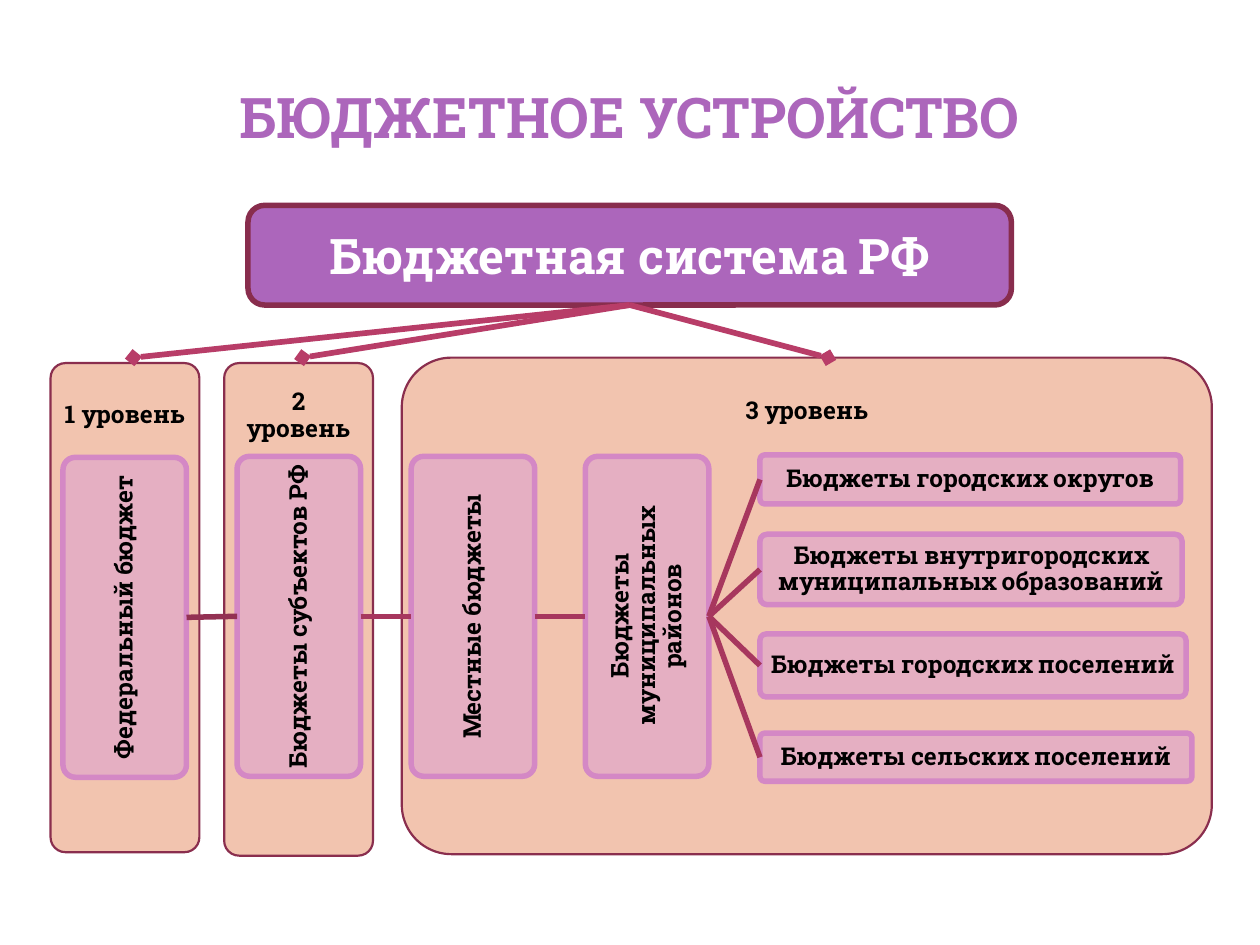
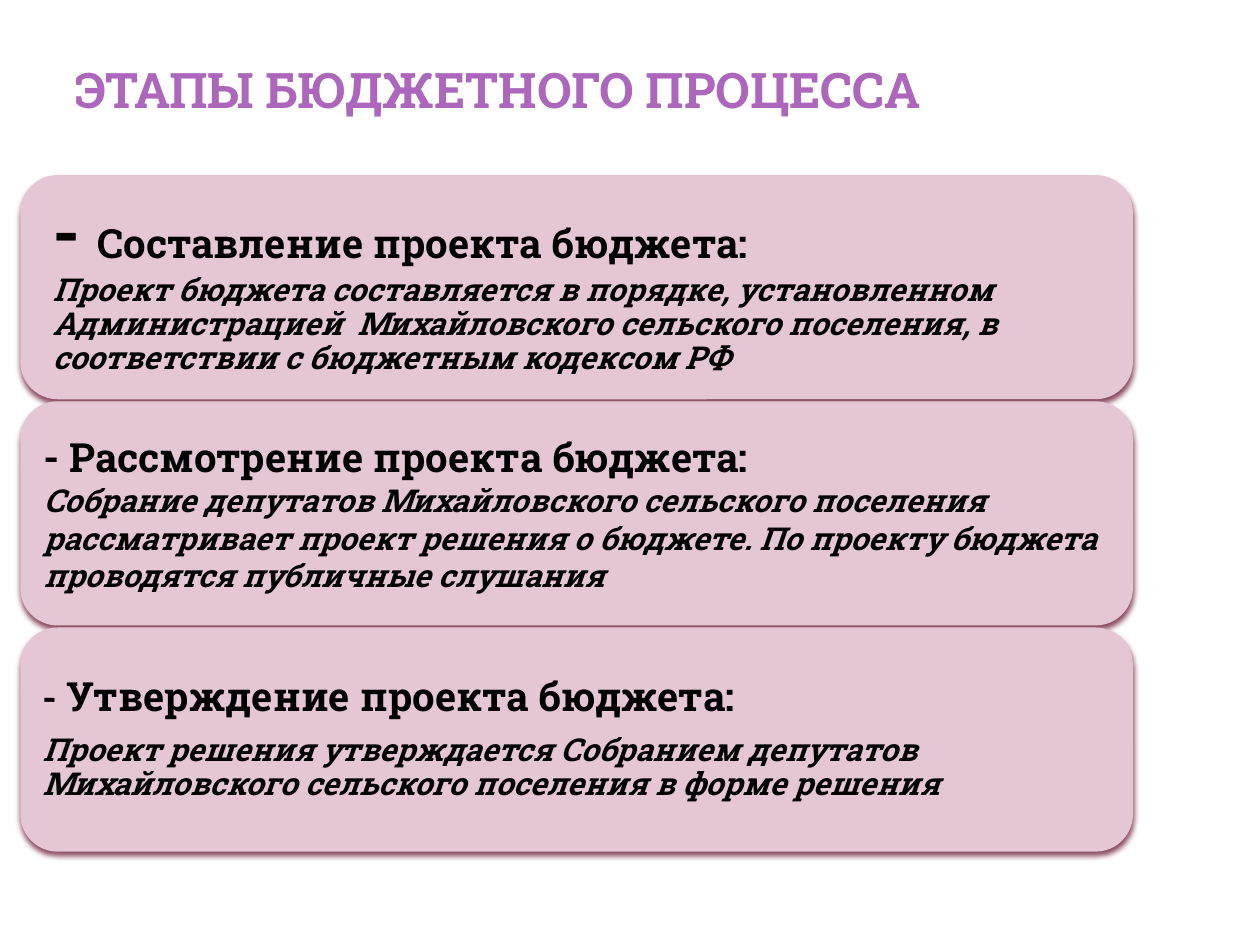
from dataclasses import dataclass
from typing import Optional

from lxml.etree import SubElement
from pptx import Presentation
from pptx.dml.color import RGBColor
from pptx.enum.shapes import MSO_CONNECTOR, MSO_SHAPE
from pptx.enum.text import MSO_ANCHOR, MSO_AUTO_SIZE, PP_ALIGN
from pptx.oxml.ns import qn
from pptx.util import Cm, Pt

FONT = "Roboto Slab"
COLORS = {
    "purple": "AC66BB", "wine": "882D4D", "panel_line": "8A2E4E",
    "peach": "F2C4AF", "pink": "E5AFC2", "orchid": "D488C5",
    "first_link": "933153", "link": "A7375E", "branch": "B83D68",
    "stage": "E5C6D5", "shadow": "722640", "black": "000000", "white": "FFFFFF",
}
BOTTOM, LEFT, RIGHT = 2, 1, 3


@dataclass(frozen=True)
class Rect:
    """Place and size in centimetres."""
    left: float
    top: float
    width: float
    height: float

    def lengths(self) -> tuple:
        return Cm(self.left), Cm(self.top), Cm(self.width), Cm(self.height)


@dataclass(frozen=True)
class BoxStyle:
    fill: str
    line: Optional[str] = None
    line_width: float = 0
    corner: float = 0.1
    size: float = 14
    color: str = "black"
    spacing: float = 0.9


@dataclass(frozen=True)
class Level:
    text: str
    rect: Rect
    head: float
    inset: float
    branch_x: float


@dataclass(frozen=True)
class Stage:
    heading: str
    detail: str
    dash_size: float
    inset: float
    spacing: float = 0.9
    after: float = 0


ROOT = BoxStyle("purple", "wine", 3.15, 0.1667, 28, "white", 1)
PANEL = BoxStyle("peach", "panel_line", 1.25)
BUDGET = BoxStyle("pink", "orchid", 3.15)
STAGE = BoxStyle("stage", corner=0.1667)

LEVELS = [
    Level("3 уровень", Rect(8.1, 7.21, 16.33, 10.01), 2.18, 0.2, 16.69),
    Level("2 уровень", Rect(4.52, 7.32, 3, 9.93), 2.13, 0.3, 6.1),
    Level("1 уровень", Rect(1.02, 7.32, 3, 9.86), 2.11, 0.12, 2.69),
]
BRANCH_Y = 7.21
CHAIN = ["Федеральный бюджет", "Бюджеты субъектов РФ", "Местные бюджеты",
         "Бюджеты муниципальных районов"]
LOCAL_LEFT = 15.32
LOCAL = [
    ("Бюджеты городских округов", Rect(LOCAL_LEFT, 9.17, 8.48, 0.99)),
    ("Бюджеты внутригородских муниципальных образований",
     Rect(LOCAL_LEFT, 10.77, 8.51, 1.42)),
    ("Бюджеты городских поселений", Rect(LOCAL_LEFT, 12.78, 8.59, 1.27)),
    ("Бюджеты сельских поселений", Rect(LOCAL_LEFT, 14.78, 8.71, 0.97)),
]
STAGES = [
    Stage("Составление проекта бюджета:",
          "Проект бюджета составляется в порядке, установленном Администрацией  "
          "Михайловского сельского поселения, в соответствии с бюджетным кодексом РФ",
          40, 0.43),
    Stage("Рассмотрение проекта бюджета:",
          "Собрание депутатов Михайловского сельского поселения рассматривает проект "
          "решения о бюджете. По проекту бюджета проводятся публичные слушания",
          23, 0.25, spacing=1),
    Stage("Утверждение проекта бюджета:",
          "Проект решения утверждается Собранием депутатов Михайловского сельского "
          "поселения в форме решения",
          21, 0.23, after=8),
]


def rgb(name: str) -> RGBColor:
    return RGBColor.from_string(COLORS[name])


def format_run(r, size: float, color: str, italic: bool = False) -> None:
    r.font.name = FONT
    r.font.size = Pt(size)
    r.font.bold = True
    r.font.italic = italic
    r.font.color.rgb = rgb(color)


def set_insets(tf, side: float, top: float, bottom: float) -> None:
    tf.margin_left = tf.margin_right = Cm(side)
    tf.margin_top, tf.margin_bottom = Cm(top), Cm(bottom)


def add_titled_slide(prs, title: str, rect: Rect, size: float, align: PP_ALIGN):
    slide = prs.slides.add_slide(prs.slide_layouts[5])
    sp = slide.shapes.title
    sp.left, sp.top, sp.width, sp.height = rect.lengths()
    tf = sp.text_frame
    tf.text = title
    tf.auto_size = MSO_AUTO_SIZE.NONE
    tf.vertical_anchor = MSO_ANCHOR.BOTTOM
    set_insets(tf, 0.13, 0, 0)
    p = tf.paragraphs[0]
    p.alignment = align
    format_run(p.runs[0], size, "purple")
    return slide


def add_box(slide, rect: Rect, style: BoxStyle, text: str = ""):
    sp = slide.shapes.add_shape(MSO_SHAPE.ROUNDED_RECTANGLE, *rect.lengths())
    sp.adjustments[0] = style.corner
    sp.shadow.inherit = False
    sp.fill.solid()
    sp.fill.fore_color.rgb = rgb(style.fill)
    if style.line:
        sp.line.color.rgb = rgb(style.line)
        sp.line.width = Pt(style.line_width)
    else:
        sp.line.fill.background()
    tf = sp.text_frame
    tf.word_wrap = True
    tf.vertical_anchor = MSO_ANCHOR.MIDDLE
    if text:
        tf.text = text
        p = tf.paragraphs[0]
        p.alignment = PP_ALIGN.CENTER
        p.line_spacing = style.spacing
        format_run(p.runs[0], style.size, style.color)
    return sp


def add_budget(slide, rect: Rect, text: str, upright: bool = False):
    sp = add_box(slide, rect, BUDGET, text)
    set_insets(sp.text_frame, 0.03, 0.03, 0.03)
    if upright:
        sp.element.txBody.bodyPr.set("vert", "vert270")
    return sp


def add_line(slide, start, side: int, color: str, width: float,
             x: float = 0, y: float = 0):
    """Draw a line from the given side of start to a point."""
    c = slide.shapes.add_connector(MSO_CONNECTOR.STRAIGHT, 0, 0, Cm(x), Cm(y))
    c.begin_connect(start, side)
    c.line.color.rgb = rgb(color)
    c.line.width = Pt(width)
    SubElement(c.element.spPr, qn("a:effectLst"))
    return c


def link(slide, start, end, color: str = "link") -> None:
    add_line(slide, start, RIGHT, color, 3.15).end_connect(end, LEFT)


def add_stage_shadow(sp) -> None:
    effects = sp.element.spPr.find(qn("a:effectLst"))
    shadow = SubElement(effects, qn("a:outerShdw"), blurRad=str(Pt(3.1)),
                        dist=str(Pt(2)), dir="5400000", rotWithShape="0")
    color = SubElement(shadow, qn("a:srgbClr"), val=COLORS["shadow"])
    SubElement(color, qn("a:alpha"), val="83000")


def build_structure(prs) -> None:
    slide = add_titled_slide(prs, "БЮДЖЕТНОЕ УСТРОЙСТВО",
                             Rect(1.27, 0.53, 22.86, 2.49), 32, PP_ALIGN.CENTER)
    for level in LEVELS:
        sp = add_box(slide, level.rect, PANEL, level.text)
        set_insets(sp.text_frame, level.inset, 0, level.rect.height - level.head)

    chain = []
    for i, text in enumerate(CHAIN):
        top = 9.2 if i else 9.22
        chain.append(add_budget(slide, Rect(1.27 + 3.51 * i, top, 2.49, 6.45),
                                text, upright=True))
    for i, (start, end) in enumerate(zip(chain, chain[1:])):
        link(slide, start, end, "link" if i else "first_link")
    for text, rect in LOCAL:
        link(slide, chain[-1], add_budget(slide, rect, text))

    root = add_box(slide, Rect(5, 4.14, 15.39, 2.01), ROOT, "Бюджетная система РФ")
    for level in LEVELS:
        c = add_line(slide, root, BOTTOM, "branch", 3.25, level.branch_x, BRANCH_Y)
        SubElement(c.element.spPr.find(qn("a:ln")), qn("a:tailEnd"), type="diamond")


def build_stages(prs) -> None:
    slide = add_titled_slide(prs, "ЭТАПЫ БЮДЖЕТНОГО ПРОЦЕССА",
                             Rect(1.4, 0.79, 20.32, 1.6), 28, PP_ALIGN.LEFT)
    for i, stage in enumerate(STAGES):
        sp = add_box(slide, Rect(0.41, 3.53 + 4.56 * i, 22.43, 4.52), STAGE)
        add_stage_shadow(sp)
        tf = sp.text_frame
        set_insets(tf, stage.inset, stage.inset, stage.inset)
        heading, detail = tf.paragraphs[0], tf.add_paragraph()
        for p, text, size, italic in (
            (heading, "- ", stage.dash_size, False),
            (heading, stage.heading, 23, False),
            (detail, stage.detail, 18, True),
        ):
            r = p.add_run()
            r.text = text
            format_run(r, size, "black", italic)
        for p in tf.paragraphs:
            p.alignment = PP_ALIGN.LEFT
            p.line_spacing = stage.spacing
            p.space_after = Pt(stage.after)


def main() -> None:
    prs = Presentation()
    prs.slide_width, prs.slide_height = Cm(25.4), Cm(19.05)
    build_structure(prs)
    build_stages(prs)
    prs.save("out.pptx")


if __name__ == "__main__":
    main()
